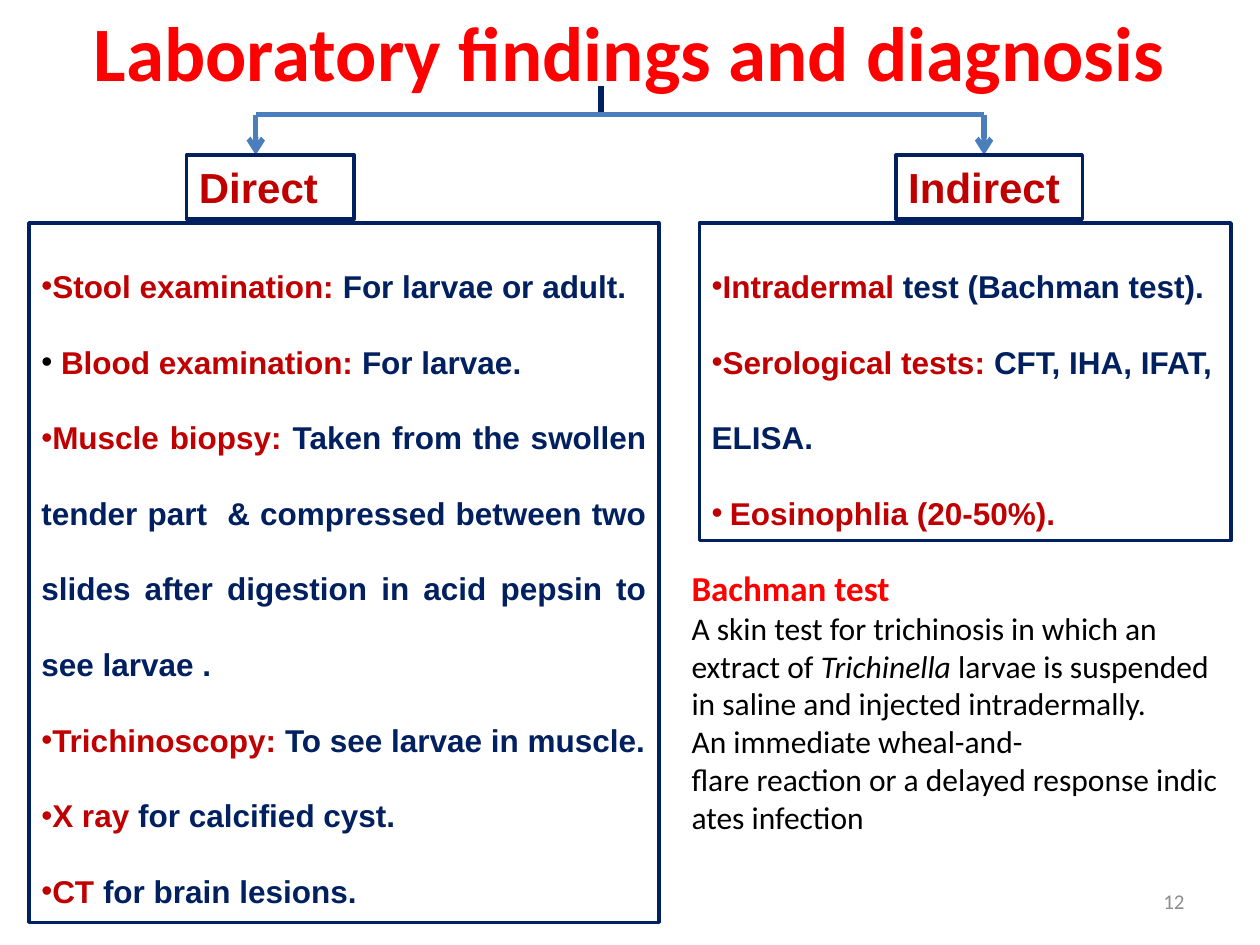
from lxml.etree import SubElement
from pptx import Presentation
from pptx.dml.color import RGBColor
from pptx.enum.shapes import MSO_CONNECTOR as Link, MSO_SHAPE as Preset
from pptx.enum.text import MSO_ANCHOR as Anchor, MSO_AUTO_SIZE as Fit, PP_ALIGN as Align
from pptx.oxml.ns import qn
from pptx.util import Inches, Pt

RED = RGBColor(0xFF, 0x00, 0x00)
CRIMSON = RGBColor(0xC0, 0x00, 0x00)
NAVY = RGBColor(0x00, 0x20, 0x60)
BLUE = RGBColor(0x4B, 0x7E, 0xBC)
GREY = RGBColor(0x8C, 0x8C, 0x8C)
BLACK = RGBColor(0x00, 0x00, 0x00)
WHITE = RGBColor(0xFF, 0xFF, 0xFF)

COLUMNS, ROWS = 100, 75


def glue(text):
    """Join words with no-break spaces."""
    return text.replace(" ", chr(160))


class Board:
    """Style and current slide; lengths are grid columns and rows."""
    heading_font, label_font = "Calibri", "Arial"

    def __init__(self, deck):
        self.slide = deck.slides.add_slide(deck.slide_layouts[6])
        self.column = deck.slide_width / COLUMNS
        self.row = deck.slide_height / ROWS

    def place(self, *lengths):
        steps = (self.column, self.row) * 2
        return [round(length * step) for length, step in zip(lengths, steps)]

    def run(self, paragraph, text, size, color, bold=False, italic=False, font=None):
        run = paragraph.add_run()
        run.text = text
        run.font.name = font or self.heading_font
        run.font.size = Pt(size)
        run.font.bold, run.font.italic = bold, italic
        run.font.color.rgb = color

    def bullet(self, paragraph, color=None):
        props = paragraph._p.get_or_add_pPr()
        if color is not None:
            tint = SubElement(props, qn("a:buClr"))
            SubElement(tint, qn("a:srgbClr"), val=str(color))
        SubElement(props, qn("a:buFont"), typeface=self.label_font)
        SubElement(props, qn("a:buChar"), char="•")

    def text(self, at, paragraphs, anchor=Anchor.TOP, align=Align.LEFT, spacing=None):
        frame = self.slide.shapes.add_textbox(*self.place(*at)).text_frame
        frame.word_wrap = True
        frame.vertical_anchor = anchor
        for index, runs in enumerate(paragraphs):
            paragraph = frame.paragraphs[0] if index == 0 else frame.add_paragraph()
            paragraph.alignment = align
            if spacing:
                paragraph.line_spacing = spacing
            for run in runs:
                self.run(paragraph, *run)

    def box(self, at):
        box = self.slide.shapes.add_shape(Preset.RECTANGLE, *self.place(*at))
        box.shadow.inherit = False
        box.fill.solid()
        box.fill.fore_color.rgb = WHITE
        box.line.color.rgb = NAVY
        box.line.width = Pt(2)
        frame = box.text_frame
        frame.word_wrap = True
        frame.vertical_anchor = Anchor.TOP
        frame.auto_size = Fit.SHAPE_TO_FIT_TEXT
        return frame

    def label(self, at, text):
        paragraph = self.box(at).paragraphs[0]
        paragraph.alignment = Align.LEFT
        self.run(paragraph, text, 24, CRIMSON, True, font=self.label_font)

    def findings(self, at, items, bullet_color=None, justified=()):
        frame = self.box(at)
        for index, (lead, term, detail) in enumerate(items):
            paragraph = frame.paragraphs[0] if index == 0 else frame.add_paragraph()
            self.bullet(paragraph, bullet_color)
            paragraph.line_spacing = 2.0
            paragraph.alignment = Align.JUSTIFY if index in justified else Align.LEFT
            if lead:
                bold = bullet_color is None
                font = self.label_font if bold else self.heading_font
                self.run(paragraph, lead, 18, BLACK, bold, font=font)
            for part, color in ((term, CRIMSON), (detail, NAVY)):
                if part:
                    self.run(paragraph, part, 18, color, True, font=self.label_font)

    def line(self, start, end, color=BLUE, arrow=False):
        line = self.slide.shapes.add_connector(
            Link.STRAIGHT, *self.place(*start, *end))
        line.line.color.rgb = color
        line.line.width = Pt(3)
        if arrow:
            SubElement(line.line._get_or_add_ln(), qn("a:tailEnd"), type="arrow")
        SubElement(line._element.spPr, qn("a:effectLst"))


def main():
    deck = Presentation()
    deck.slide_width, deck.slide_height = Inches(10), Inches(7.5)
    board = Board(deck)

    # Title
    board.text((5, 1.3, 90, 12.5),
               [[("Laboratory findings and diagnosis", 44, RED, True)]],
               align=Align.CENTER, spacing=0.8)

    # Branching from the title to both groups
    trunk, fork, tip = 47.7, 9.1, 12.3
    board.line((trunk, 6.8), (trunk, fork), NAVY)
    for branch in (20.3, 78.1):
        board.line((trunk, fork), (branch, fork))
        board.line((branch, fork), (branch, tip), arrow=True)

    # Group labels
    board.label((14.8, tip, 13.3, 5.1), "Direct")
    board.label((71.1, tip, 14.8, 5.1), "Indirect")

    # Findings of each group: lead, term, detail
    board.findings((2.3, 17.7, 50, 55.5), [
        ("", "Stool examination: ", "For larvae or adult."),
        (" ", "Blood examination: ", "For larvae."),
        ("", "Muscle biopsy: ", "Taken from the swollen tender part  & compressed "
         "between two slides after digestion in acid pepsin to see larvae ."),
        ("", "Trichinoscopy: ", "To see larvae in muscle."),
        ("", "X ray ", "for calcified cyst."),
        ("", "CT ", "for brain lesions."),
    ], justified=(2,))
    board.findings((55.5, 17.7, 42.2, 25.2), [
        ("", "Intradermal ", "test (Bachman test)."),
        ("", "Serological tests: ", "CFT, IHA, IFAT, ELISA."),
        (" ", "Eosinophlia (20-50%).", ""),
    ], bullet_color=CRIMSON)

    # Slide number
    board.text((71.7, 69.5, 23.3, 4), [[("12", 12, GREY)]],
               anchor=Anchor.MIDDLE, align=Align.RIGHT)

    # Explanation of the Bachman test
    body = (18, BLACK)
    board.text((53.9, 44.5, 44.5, 22.6), [
        [("Bachman test", 20, RED, True)],
        [(glue("A skin test for trichinosis in which an "), *body)],
        [(glue("extract of "), *body), ("Trichinella", *body, False, True),
         (glue(" larvae is suspended"), *body)],
        [(glue("in saline and injected intradermally. "), *body)],
        [(glue("An immediate wheal-and-") + " "
          + glue("flare reaction or a delayed response indicates infection"), *body)],
    ])

    deck.save("out.pptx")


if __name__ == "__main__":
    main()
